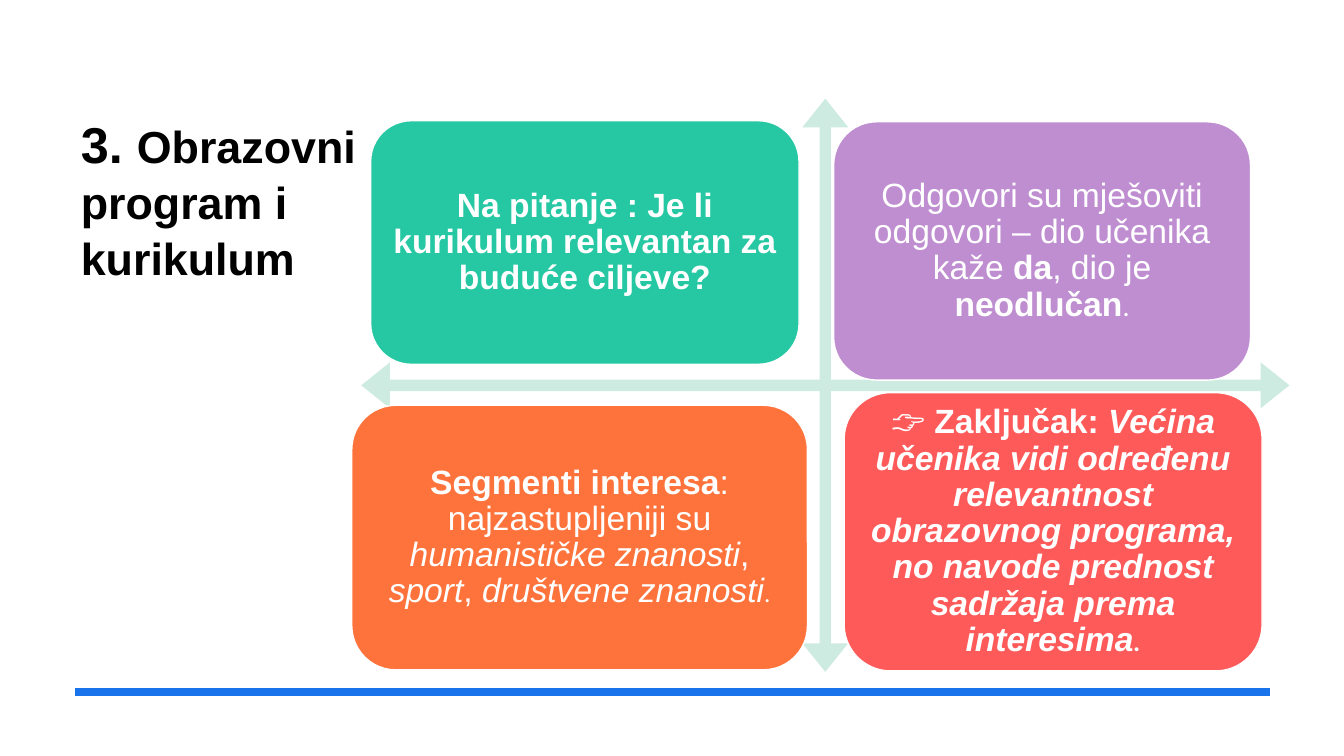
from pptx import Presentation
from pptx.dml.color import RGBColor
from pptx.enum.shapes import MSO_CONNECTOR, MSO_SHAPE
from pptx.enum.text import MSO_ANCHOR, PP_ALIGN
from pptx.oxml import parse_xml
from pptx.util import Pt

PX = 9525
ROUND, QUAD = MSO_SHAPE.ROUNDED_RECTANGLE, MSO_SHAPE.QUAD_ARROW
STRAIGHT = MSO_CONNECTOR.STRAIGHT
TOP, MIDDLE = MSO_ANCHOR.TOP, MSO_ANCHOR.MIDDLE
LEFT, CENTER = PP_ALIGN.LEFT, PP_ALIGN.CENTER
WHITE, BLACK, BLUE, MINT = "FFFFFF", "000000", "1973EB", "CDEBE0"
NO_FX = '<a:effectLst xmlns:a="http://schemas.openxmlformats.org/drawingml/2006/main"/>'

TITLE = [("3. ", "b", 36, "Arial"),
         ("Obrazovni program i kurikulum", "b", 32, "Arial")]

CARDS = [
    ((353, 115, 408, 232), "25C8A2", [
        ("Na pitanje : Je li kurikulum relevantan za buduće ciljeve?", "b", 24, "Arial")]),
    ((794, 116, 397, 246), "BF8ED1", [
        ("Odgovori su mješoviti odgovori – dio učenika kaže ", "", 24, "Arial"),
        ("da", "b", 24, "Arial"),
        (", dio je ", "", 24, "Arial"),
        ("neodlučan", "b", 24, "Arial"),
        (".", "", 20, "Calibri")]),
    ((335, 386, 434, 252), "FE733C", [
        ("Segmenti interesa", "b", 24, "Arial"),
        (": najzastupljeniji su ", "", 24, "Arial"),
        ("humanističke znanosti", "i", 24, "Arial"),
        (", ", "", 24, "Arial"),
        ("sport", "i", 24, "Arial"),
        (", ", "", 24, "Arial"),
        ("društvene znanosti", "i", 24, "Arial"),
        (".", "", 18, "Calibri")]),
    ((804, 374, 398, 265), "FE5A5A", [
        ("👉 ", "", 24, "Arial"),
        ("Zaključak: ", "b", 24, "Arial"),
        ("Većina učenika vidi određenu relevantnost obrazovnog programa, "
         "no navode prednost sadržaja prema interesima", "bi", 24, "Arial"),
        (".", "bi", 19, "Calibri")]),
]


def color(code):
    """Turn a hex string into a colour."""
    return RGBColor.from_string(code)


def emu(box):
    """Turn px lengths into EMU."""
    return [n * PX for n in box]


def write(frame, runs, ink, anchor, align, space):
    """Fill a text frame with one paragraph of styled runs."""
    frame.word_wrap = True
    frame.vertical_anchor = anchor
    frame.margin_left = frame.margin_right = 10 * PX
    frame.margin_top = frame.margin_bottom = 10 * PX
    para = frame.paragraphs[0]
    para.alignment = align
    para.line_spacing = space
    for text, style, size, face in runs:
        run = para.add_run()
        run.text = text
        font = run.font
        font.name, font.size = face, Pt(size)
        font.bold, font.italic = "b" in style, "i" in style
        font.color.rgb = color(ink)


def title(slide, box):
    """Place the heading in its box."""
    frame = slide.shapes.add_textbox(*emu(box)).text_frame
    write(frame, TITLE, BLACK, TOP, LEFT, 1.03)


def rule(slide, x, y, width):
    """Draw the line along the foot of the slide."""
    line = slide.shapes.add_connector(STRAIGHT, *emu((x, y, x + width, y)))
    line.line.color.rgb = color(BLUE)
    line.line.width = Pt(6)
    line._element.spPr.append(parse_xml(NO_FX))


def cross(slide, box):
    """Draw the four-way arrow behind the cards."""
    arrow = slide.shapes.add_shape(QUAD, *emu(box))
    arrow.shadow.inherit = False
    for i, ratio in enumerate((0.02, 0.04, 0.05)):
        arrow.adjustments[i] = ratio
    arrow.fill.solid()
    arrow.fill.fore_color.rgb = color(MINT)
    arrow.line.fill.background()


def card(slide, box, fill, runs):
    """Draw one rounded card with its text."""
    shape = slide.shapes.add_shape(ROUND, *emu(box))
    shape.shadow.inherit = False
    shape.fill.solid()
    shape.fill.fore_color.rgb = color(fill)
    shape.line.color.rgb = color(WHITE)
    shape.line.width = Pt(1)
    write(shape.text_frame, runs, WHITE, MIDDLE, CENTER, 0.9)


def main():
    """Build and save the slide."""
    deck = Presentation()
    deck.slide_width, deck.slide_height = emu((1280, 720))
    slide = deck.slides.add_slide(deck.slide_layouts[6])
    title(slide, (67, 96, 315, 437))
    rule(slide, 71, 659, 1139)
    cross(slide, (344, 94, 884, 546))
    for box, fill, runs in CARDS:
        card(slide, box, fill, runs)
    deck.save("out.pptx")


if __name__ == "__main__":
    main()
